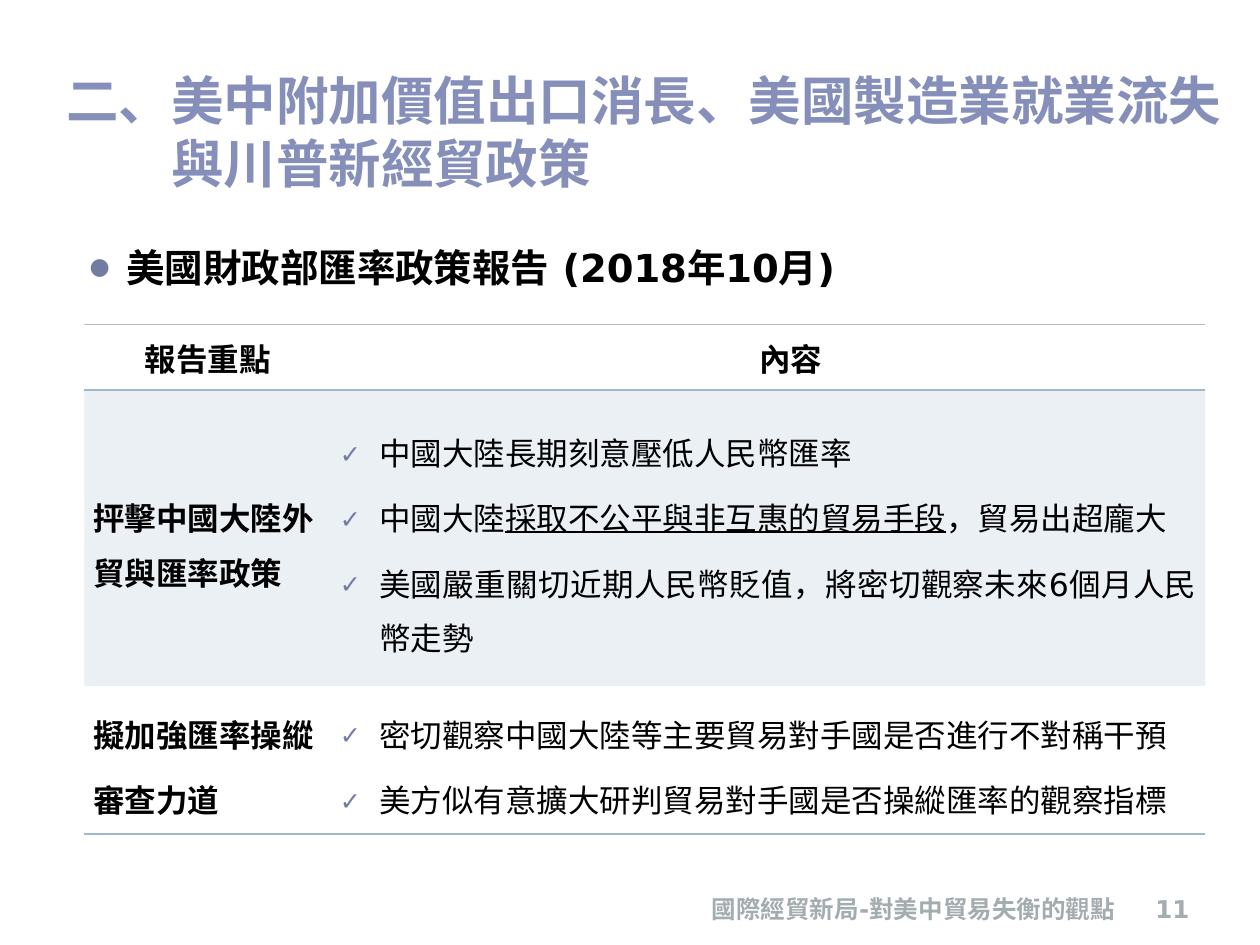
import pptx
import pptx.util
import pptx.dml.color
import pptx.enum.text
import pptx.oxml
import pptx.oxml.ns
from lxml import etree

Cm = pptx.util.Cm
Pt = pptx.util.Pt
ALIGN = pptx.enum.text.PP_ALIGN
ANCHOR = pptx.enum.text.MSO_ANCHOR
qn = pptx.oxml.ns.qn

FONT = "DejaVu Sans"
BLACK, TITLE, FOOTER = "000000", "858FBA", "A3ACAF"
BULLET, RULE, TOP_RULE = "727CA3", "9FB8CD", "B5BDBF"
PLAIN_TABLE = "{2D5ABB26-0587-4C30-8999-92F81FD0307C}"

HEADERS = ["報告重點", "內容"]
ROWS = [
    (["抨擊中國大陸外貿與匯率政策"],
     [["中國大陸長期刻意壓低人民幣匯率"],
      ["中國大陸", "採取不公平與非互惠的貿易手段", "，貿易出超龐大"],
      ["美國嚴重關切近期人民幣貶值，將密切觀察未來6個月人民幣走勢"]]),
    (["擬加強匯率操縱", "審查力道"],
     [["密切觀察中國大陸等主要貿易對手國是否進行不對稱干預"],
      ["美方似有意擴大研判貿易對手國是否操縱匯率的觀察指標"]]),
]


def rgb(color):
    return pptx.dml.color.RGBColor.from_string(color)


def add_child(parent, tag, **attrs):
    child = etree.SubElement(parent, qn(tag))
    for name, value in attrs.items():
        child.set(name, str(value))
    return child


def add_run(p, text, size, color, bold, underline=False):
    r = p.add_run()
    r.text = text
    r.font.size = Pt(size)
    r.font.bold = bold
    if underline:
        r.font.underline = True
    r.font.color.rgb = rgb(color)
    r.font.name = FONT
    add_child(r.font._element, "a:ea", typeface=FONT)


def set_indent(p, margin, indent):
    pPr = p._p.get_or_add_pPr()
    pPr.set("marL", str(Cm(margin)))
    pPr.set("indent", str(Cm(indent)))


def set_bullet(p, char, percent, indent):
    set_indent(p, indent, -indent)
    pPr = p._p.get_or_add_pPr()
    add_child(add_child(pPr, "a:buClr"), "a:srgbClr", val=BULLET)
    add_child(pPr, "a:buSzPct", val=percent * 1000)
    add_child(pPr, "a:buFont", typeface=FONT)
    add_child(pPr, "a:buChar", char=char)


def add_text(s, box, text, size, color, anchor, align=ALIGN.LEFT):
    tf = s.shapes.add_textbox(*map(Cm, box)).text_frame
    tf.word_wrap = True
    tf.vertical_anchor = anchor
    p = tf.paragraphs[0]
    p.alignment = align
    add_run(p, text, size, color, True)
    return tf


def add_title(s, box):
    tf = add_text(s, box, "二、美中附加價值出口消長、美國製造業就業流失與川普新經貿政策",
                  30, TITLE, ANCHOR.BOTTOM)
    set_indent(tf.paragraphs[0], 2.11, -2.24)


def add_body(s, box):
    tf = add_text(s, box, "美國財政部匯率政策報告 (2018年10月)",
                  22, BLACK, ANCHOR.TOP, ALIGN.JUSTIFY)
    tf.margin_left = Cm(0.51)
    p = tf.paragraphs[0]
    p.line_spacing = 1.5
    p.space_before = Pt(6)
    set_bullet(p, "●", 60, 0.74)


def set_border(cell, side, color, width):
    ln = add_child(cell._tc.get_or_add_tcPr(), side, w=Pt(width))
    add_child(add_child(ln, "a:solidFill"), "a:srgbClr", val=color)


def fill_cell(cell, color, percent):
    cell.fill.solid()
    cell.fill.fore_color.rgb = rgb(color)
    srgb = cell._tc.tcPr.find(".//" + qn("a:srgbClr"))
    add_child(srgb, "a:alpha", val=percent * 1000)


def write_cell(cell, lines, bold, align, anchor=ANCHOR.MIDDLE, bullets=False):
    cell.margin_left = cell.margin_right = Cm(0.18)
    cell.margin_top = cell.margin_bottom = 0
    cell.vertical_anchor = anchor
    tf = cell.text_frame
    for i, parts in enumerate(lines):
        p = tf.paragraphs[0] if i == 0 else tf.add_paragraph()
        p.alignment = align
        p.line_spacing = 1.5
        p.space_after = Pt(6)
        if bullets:
            set_bullet(p, "✓", 80, 0.79)
        for j, text in enumerate(parts):
            add_run(p, text, 18, BLACK, bold, underline=j == 1)


def add_report_table(s, box):
    frame = s.shapes.add_table(len(ROWS) + 1, len(HEADERS), *map(Cm, box))
    table = frame.table
    table.first_row = table.horz_banding = False
    table._tbl.tblPr.find(qn("a:tableStyleId")).text = PLAIN_TABLE
    for column, share in zip(table.columns, (0.22, 0.78)):
        column.width = Cm(box[2] * share)
    for row, share in zip(table.rows, (0.13, 0.58, 0.29)):
        row.height = Cm(box[3] * share)

    for col, (header, indent) in enumerate(zip(HEADERS, (-0.05, 0.91))):
        cell = table.cell(0, col)
        write_cell(cell, [[header]], True, ALIGN.CENTER, ANCHOR.TOP)
        set_indent(cell.text_frame.paragraphs[0], 0, indent)
        set_border(cell, "a:lnT", TOP_RULE, 0.5)
        set_border(cell, "a:lnB", RULE, 1)

    for row, (topic, points) in enumerate(ROWS, 1):
        cells = [table.cell(row, col) for col in range(len(HEADERS))]
        write_cell(cells[0], [[line] for line in topic], True, ALIGN.LEFT)
        write_cell(cells[1], points, False, ALIGN.JUSTIFY, bullets=True)
        for cell in cells:
            if row == len(ROWS):
                set_border(cell, "a:lnB", RULE, 1)
            if row % 2:
                fill_cell(cell, RULE, 20)
            else:
                cell.fill.background()


def add_footer(s, box):
    left, top, width, height = box
    number_width = 1.52
    add_text(s, (left, top, 8.89, height), "國際經貿新局-對美中貿易失衡的觀點",
             14, FOOTER, ANCHOR.BOTTOM)
    add_text(s, (left + width - number_width, top, number_width, height), "11",
             14, FOOTER, ANCHOR.BOTTOM, ALIGN.RIGHT)


def main():
    prs = pptx.Presentation()
    prs.slide_width, prs.slide_height = Cm(25.4), Cm(19.05)
    s = prs.slides.add_slide(prs.slide_layouts[6])
    add_title(s, (1.09, 1.12, 23.8, 2.92))
    add_body(s, (1.3, 4.32, 23.6, 14.4))
    add_footer(s, (14.1, 17.73, 10.13, 1.02))
    add_report_table(s, (1.7, 6.53, 22.6, 10.28))
    prs.save("out.pptx")


if __name__ == "__main__":
    main()
